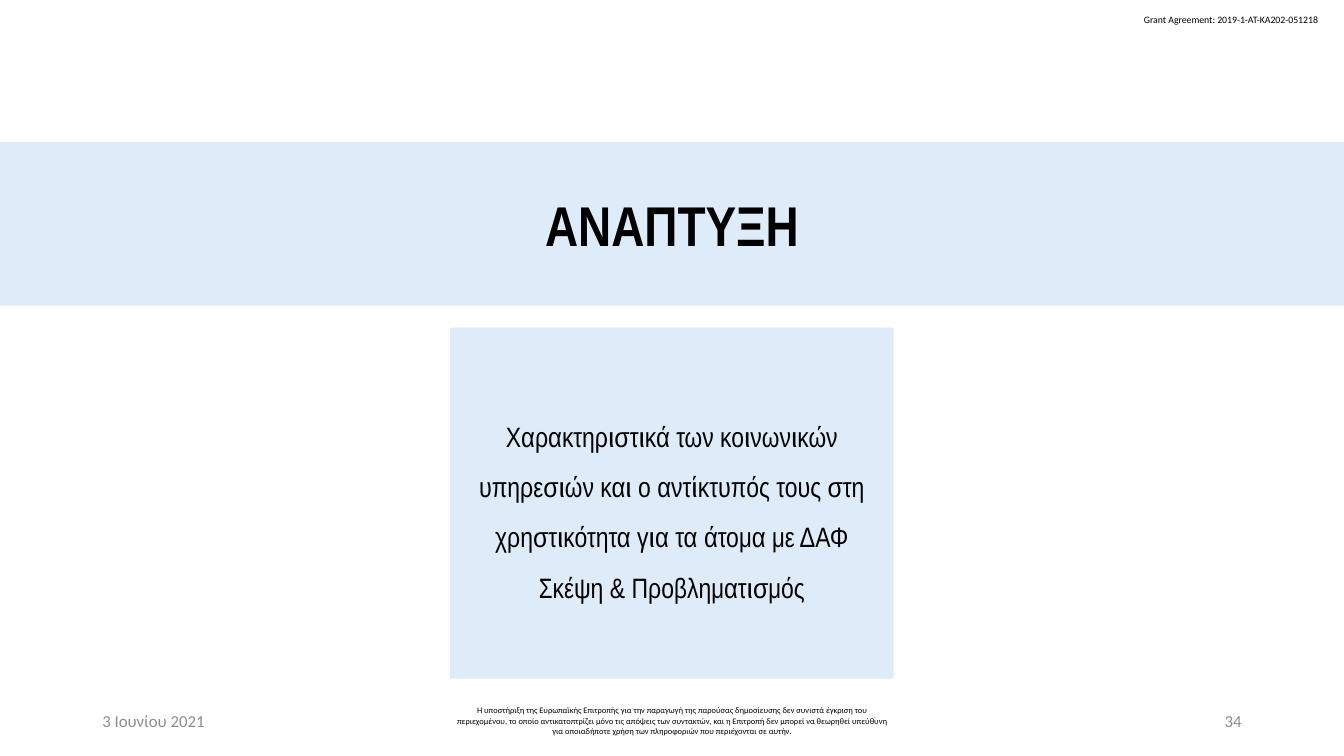
import pptx
import pptx.util
import pptx.dml.color
import pptx.enum.shapes
import pptx.enum.text

ALIGN = pptx.enum.text.PP_ALIGN
ANCHOR = pptx.enum.text.MSO_ANCHOR
COLUMNS, ROWS = 160, 90
UNIT = pptx.util.Inches(7.5) // ROWS


def color(value):
    return pptx.dml.color.RGBColor.from_string(value)


class SectionSlide:
    body_font = "Calibri"
    heading_font = "Arial Narrow"
    black = "000000"
    gray = "8C8C8C"
    pale_blue = "DEEBF8"

    def __init__(self, presentation):
        self.slide = presentation.slides.add_slide(presentation.slide_layouts[6])

    def place(self, *cells):
        return [round(cell * UNIT) for cell in cells]

    def set_text(self, shape, text, size, font, ink, align, anchor, bold=False, spacing=None):
        frame = shape.text_frame
        frame.text = text
        frame.vertical_anchor = anchor
        for paragraph in frame.paragraphs:
            paragraph.alignment = align
            paragraph.line_spacing = spacing
            for run in paragraph.runs:
                run.font.size = pptx.util.Pt(size)
                run.font.name = font
                run.font.bold = bold
                run.font.color.rgb = color(ink)

    def label(self, cells, text, size, ink, align, anchor=ANCHOR.MIDDLE, wrap=True):
        box = self.slide.shapes.add_textbox(*self.place(*cells))
        box.text_frame.word_wrap = wrap
        self.set_text(box, text, size, self.body_font, ink, align, anchor)

    def panel(self, cells, text, size, bold=False, spacing=None):
        rectangle = self.slide.shapes.add_shape(
            pptx.enum.shapes.MSO_SHAPE.RECTANGLE, *self.place(*cells))
        rectangle.shadow.inherit = False
        rectangle.fill.solid()
        rectangle.fill.fore_color.rgb = color(self.pale_blue)
        rectangle.line.fill.background()
        frame = rectangle.text_frame
        frame.word_wrap = True
        frame.margin_left = frame.margin_right = pptx.util.Inches(0.13)
        frame.margin_top = frame.margin_bottom = pptx.util.Inches(0.07)
        self.set_text(rectangle, text, size, self.heading_font, self.black,
                      ALIGN.CENTER, ANCHOR.MIDDLE, bold, spacing)


def main():
    presentation = pptx.Presentation()
    presentation.slide_width = COLUMNS * UNIT
    presentation.slide_height = ROWS * UNIT
    section = SectionSlide(presentation)

    section.label((135, 1, 23.6, 2.6), "Grant Agreement: 2019-1-AT-KA202-051218",
                  7, section.black, ALIGN.LEFT, ANCHOR.TOP, wrap=False)

    disclaimer = (
        "Η υποστήριξη της Ευρωπαϊκής Επιτροπής για την παραγωγή της παρούσας "
        "δημοσίευσης δεν συνιστά έγκριση του περιεχομένου, το οποίο αντικατοπτρίζει "
        "μόνο τις απόψεις των συντακτών, και η Επιτροπή δεν μπορεί να θεωρηθεί "
        "υπεύθυνη για οποιαδήποτε χρήση των πληροφοριών που περιέχονται σε αυτήν.")
    footer = [
        (11, 36, "3 Ιουνίου 2021", 12, section.gray, ALIGN.LEFT),
        (53, 54, disclaimer, 6, section.black, ALIGN.CENTER),
        (113, 36, "34", 12, section.gray, ALIGN.RIGHT),
    ]
    for column, width, text, size, ink, align in footer:
        section.label((column, 83.4, width, 4.8), text, size, ink, align)

    section.panel((0, 16.9, COLUMNS, 19.5), "ΑΝΑΠΤΥΞΗ", 40, bold=True)
    section.panel(
        (53.6, 39, 52.8, 41.8),
        "Χαρακτηριστικά των κοινωνικών υπηρεσιών και ο αντίκτυπός τους στη "
        "χρηστικότητα για τα άτομα με ΔΑΦ\nΣκέψη & Προβληματισμός",
        20, spacing=1.5)

    presentation.save("out.pptx")


if __name__ == "__main__":
    main()
